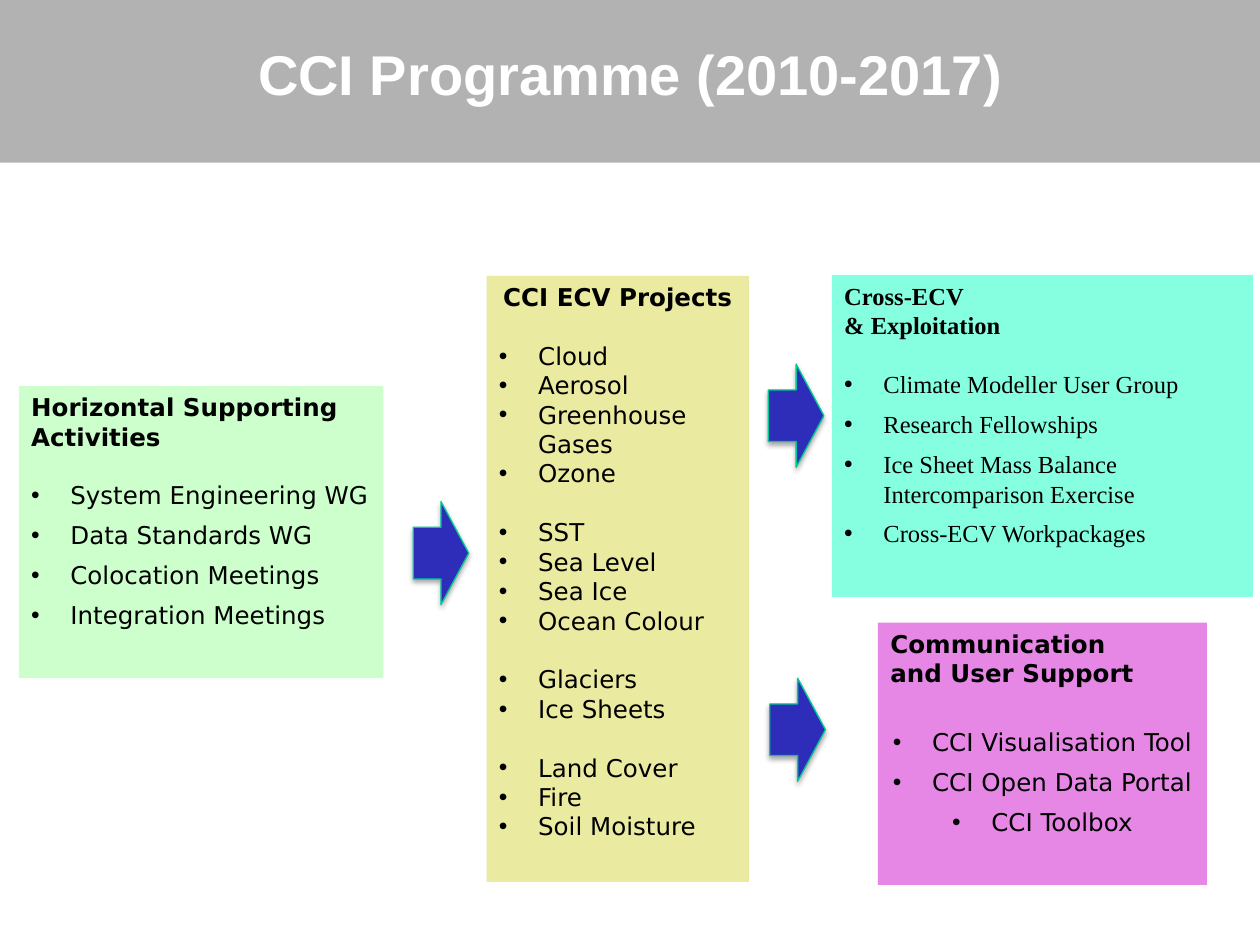
"""Build the CCI programme slide."""
import pptx
import pptx.dml.color
import pptx.enum.shapes
import pptx.enum.text
import pptx.oxml
import pptx.oxml.ns
import pptx.util

SHAPE = pptx.enum.shapes.MSO_SHAPE
ALIGN = pptx.enum.text.PP_ALIGN
ANCHOR = pptx.enum.text.MSO_ANCHOR
LINE = 16.8

SHADOW = (
    '<a:effectLst %s><a:outerShdw blurRad="39370" dist="23000" dir="5400000" '
    'rotWithShape="0"><a:srgbClr val="000000"><a:alpha val="35000"/></a:srgbClr>'
    '</a:outerShdw></a:effectLst>' % pptx.oxml.ns.nsdecls("a")
)

SUPPORT = ["System Engineering WG", "Data Standards WG", "Colocation Meetings",
           "Integration Meetings"]
THEMES = [
    ["Cloud", "Aerosol", "Greenhouse Gases", "Ozone"],
    ["SST", "Sea Level", "Sea Ice", "Ocean Colour"],
    ["Glaciers", "Ice Sheets"],
    ["Land Cover", "Fire", "Soil Moisture"],
]
CROSS = ["Climate Modeller User Group", "Research Fellowships",
         "Ice Sheet Mass Balance\vIntercomparison Exercise",
         "Cross-ECV Workpackages"]
TOOLS = ["CCI Visualisation Tool", "CCI Open Data Portal", "CCI Toolbox"]


def color(code):
    """Turn a hex string into a colour."""
    return pptx.dml.color.RGBColor.from_string(code)


def apply(item, form):
    """Set each format value on an item."""
    for name, value in form.items():
        setattr(item, name, value)


def block(slide, kind, place, fill):
    """Add a filled shape without outline at a place in centimetres."""
    shape = slide.shapes.add_shape(kind, *map(pptx.util.Cm, place))
    shape.shadow.inherit = False
    shape.fill.solid()
    shape.fill.fore_color.rgb = color(fill)
    shape.line.fill.background()
    return shape


def bullet(para):
    """Give a paragraph a round bullet and a hanging indent."""
    props = para._p.get_or_add_pPr()
    indent = pptx.util.Cm(0.79)
    props.set("marL", str(indent))
    props.set("indent", str(-indent))
    for tag, name, value in (("buFont", "typeface", "Arial"), ("buChar", "char", "•")):
        mark = pptx.oxml.parse_xml("<a:%s %s/>" % (tag, pptx.oxml.ns.nsdecls("a")))
        mark.set(name, value)
        props.append(mark)


def write(para, text, form, font, ink="000000"):
    """Fill a paragraph with formatted text."""
    para.text = text
    apply(para, form)
    apply(para.font, font)
    for run in para.runs:
        apply(run.font, font)
        run.font.color.rgb = color(ink)


def panel(slide, place, fill, head, groups, face="DejaVu Sans", after=6,
          gap=LINE, sides=(ALIGN.LEFT, ALIGN.LEFT)):
    """Add a coloured box with a bold heading and bullet groups."""
    frame = block(slide, SHAPE.RECTANGLE, place, fill).text_frame
    apply(frame, {"word_wrap": True, "vertical_anchor": ANCHOR.TOP})
    font = {"name": face, "size": pptx.util.Pt(14)}
    form = {"line_spacing": pptx.util.Pt(LINE)}
    write(frame.paragraphs[0], head,
          {**form, "alignment": sides[0], "space_after": pptx.util.Pt(gap)},
          {**font, "bold": True})
    for group in groups:
        for text in group:
            ends = text == group[-1] and group is not groups[-1]
            para = frame.add_paragraph()
            bullet(para)
            space = pptx.util.Pt(LINE if ends else after)
            write(para, text, {**form, "alignment": sides[1], "space_after": space},
                  {**font, "bold": False})


def arrow(slide, left, top):
    """Add a blue block arrow that points right."""
    shape = block(slide, SHAPE.DOWN_ARROW, (left, top, 2.08, 1.12), "2D2DB9")
    shape.rotation = 270
    shape.line.color.rgb = color("00C896")
    shape.line.width = pptx.util.Pt(0.75)
    props = shape._element.spPr
    props.remove(props.find(pptx.oxml.ns.qn("a:effectLst")))
    props.append(pptx.oxml.parse_xml(SHADOW))


def title(slide, text):
    """Add the grey band and the slide title."""
    block(slide, SHAPE.RECTANGLE, (0, 0, 25.4, 3.28), "B2B2B2")
    place = map(pptx.util.Cm, (4.24, 0.1, 16.94, 3.1))
    frame = slide.shapes.add_textbox(*place).text_frame
    apply(frame, {"word_wrap": True, "vertical_anchor": ANCHOR.MIDDLE,
                  "margin_left": 0, "margin_right": 0,
                  "margin_top": 0, "margin_bottom": 0})
    write(frame.paragraphs[0], text,
          {"alignment": ALIGN.CENTER, "line_spacing": pptx.util.Pt(29)},
          {"name": "Arial", "size": pptx.util.Pt(32), "bold": True}, "FFFFFF")


def main():
    """Build and save the slide."""
    deck = pptx.Presentation()
    apply(deck, {"slide_width": pptx.util.Cm(25.4), "slide_height": pptx.util.Cm(19.05)})
    slide = deck.slides.add_slide(deck.slide_layouts[6])
    title(slide, "CCI Programme (2010-2017)")
    panel(slide, (9.81, 5.56, 5.29, 12.22), "EAEBA1", "CCI ECV Projects", THEMES,
          after=0, sides=(ALIGN.CENTER, ALIGN.LEFT))
    panel(slide, (16.77, 5.54, 8.49, 6.5), "85FFE0", "Cross-ECV\v& Exploitation",
          [CROSS], face="Times New Roman")
    panel(slide, (0.38, 7.78, 7.35, 5.89), "CCFFCC",
          "Horizontal Supporting\vActivities", [SUPPORT])
    panel(slide, (17.7, 12.55, 6.63, 5.29), "E687E6",
          "Communication\vand User Support", [TOOLS], gap=LINE + 6,
          sides=(ALIGN.LEFT, ALIGN.CENTER))
    for left, top in ((7.85, 10.59), (15.04, 14.15), (15.01, 7.82)):
        arrow(slide, left, top)
    deck.save("out.pptx")


if __name__ == "__main__":
    main()
